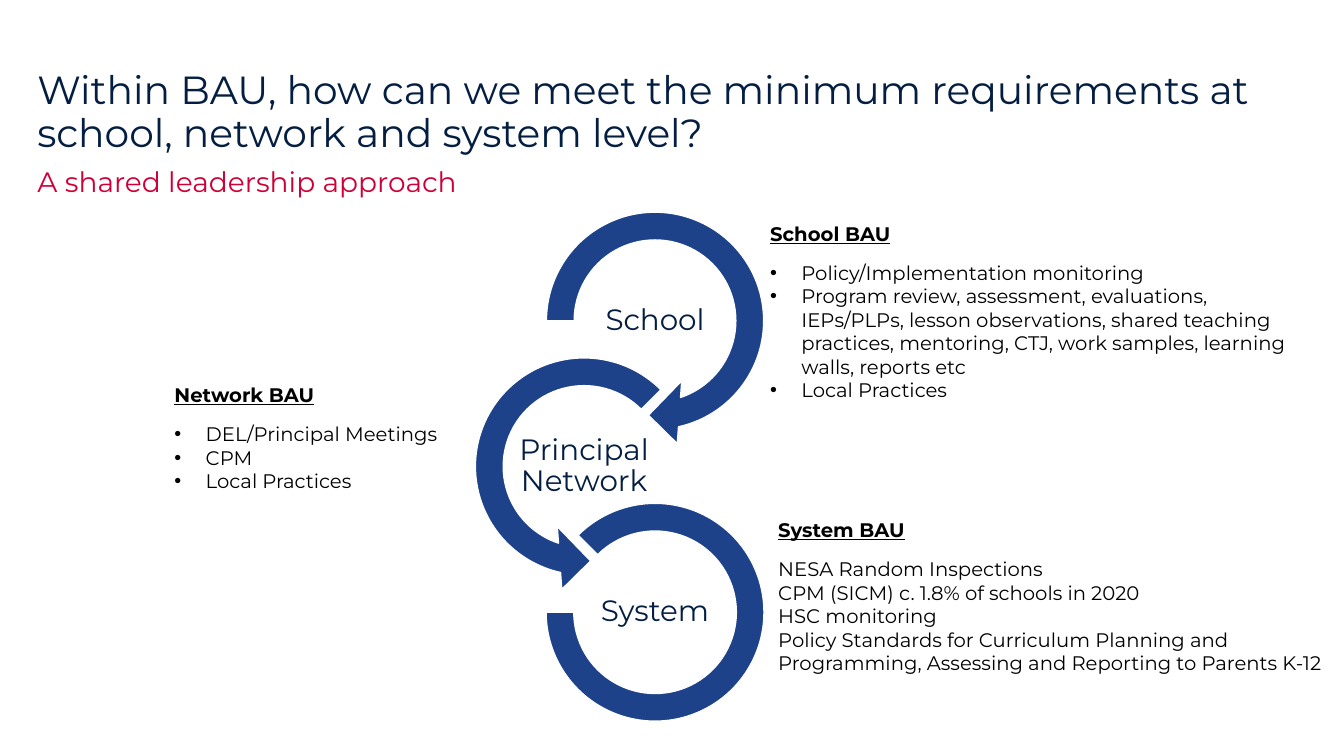
from lxml.etree import SubElement
from pptx import Presentation
from pptx.dml.color import RGBColor
from pptx.enum.shapes import MSO_SHAPE
from pptx.enum.text import MSO_ANCHOR, MSO_AUTO_SIZE, PP_ALIGN
from pptx.oxml.ns import qn
from pptx.util import Inches, Pt

COLORS = {
    "navy": "041E42",
    "red": "CE0037",
    "ring": "1D428A",
    "black": "000000",
    "white": "FFFFFF",
}
FONT = "Montserrat"
COL = Inches(13.33) / 100
ROW = Inches(7.5) / 100
LIST_INDENT = Inches(0.31)

RINGS = [
    ("School", MSO_SHAPE.CIRCULAR_ARROW, [0.11, 11.42, 45, 108, 0.125], 1, 0.48),
    ("Principal Network", MSO_SHAPE.LEFT_CIRCULAR_ARROW,
     [0.11, 11.42, 63, 189, 0.125], 0, 0.48),
    ("System", MSO_SHAPE.BLOCK_ARC, [135, 108, 0.127], 1, 0.414),
]


def grid_box(left, top, width, height):
    return [round(n) for n in (left * COL, top * ROW, width * COL, height * ROW)]


def place(shape, box):
    shape.left, shape.top, shape.width, shape.height = box


def set_frame(frame, margins=(0, 0, 0, 0), anchor=MSO_ANCHOR.TOP):
    frame.word_wrap = True
    frame.auto_size = MSO_AUTO_SIZE.NONE
    frame.vertical_anchor = anchor
    (frame.margin_left, frame.margin_top,
     frame.margin_right, frame.margin_bottom) = [Inches(m) for m in margins]


def write(paragraph, text, size=14, color="black", bold=False, underline=False,
          align=PP_ALIGN.LEFT, line=1.0, before=0, after=0, bullet=False):
    props = paragraph._p.get_or_add_pPr()
    indent = LIST_INDENT if bullet else 0
    props.set("marL", str(indent))
    props.set("indent", str(-indent))
    if bullet:
        SubElement(props, qn("a:buFont"), typeface="Arial")
        SubElement(props, qn("a:buChar"), char="•")
    else:
        SubElement(props, qn("a:buNone"))
    paragraph.alignment = align
    paragraph.line_spacing = line
    paragraph.space_before = Pt(before)
    paragraph.space_after = Pt(after)
    run = paragraph.add_run()
    run.text = text
    run.font.name = FONT
    run.font.size = Pt(size)
    run.font.bold = bold
    run.font.underline = underline
    run.font.color.rgb = RGBColor.from_string(COLORS[color])


def add_heading(title, subtitle, box):
    left, top, width, height = box
    place(title, (left, top, width, round(height * 0.47)))
    set_frame(title.text_frame, anchor=MSO_ANCHOR.MIDDLE)
    write(title.text_frame.paragraphs[0],
          "Within BAU, how can we meet the minimum requirements at school, "
          "network and system level?", size=28, color="navy", line=0.9)
    place(subtitle, (left, top + round(height * 0.49), width, round(height * 0.51)))
    set_frame(subtitle.text_frame, margins=(0, 0.05, 0.1, 0.05))
    write(subtitle.text_frame.paragraphs[0], "A shared leadership approach",
          size=20, color="red", line=1.5, after=6)


def add_practices(holder, box, heading, items, bullet=True):
    place(holder, box)
    frame = holder.text_frame
    set_frame(frame)
    write(frame.paragraphs[0], heading, bold=True, underline=True)
    for index, item in enumerate(items):
        write(frame.add_paragraph(), item, bullet=bullet,
              before=0 if index else 11)


def add_rings(slide, box):
    left, top, width, height = box
    full = height * 0.48
    pitch = height * 0.277
    label_width, label_height = height * 0.27, height * 0.134
    for level, (name, outline, adjustments, side, share) in enumerate(RINGS):
        center_x = left + full / 2 + side * (width - full)
        center_y = top + full / 2 + level * pitch
        size = height * share
        ring = slide.shapes.add_shape(
            outline, round(center_x - size / 2), round(center_y - size / 2),
            round(size), round(size))
        for index, value in enumerate(adjustments):
            ring.adjustments[index] = value
        ring.shadow.inherit = False
        ring.fill.solid()
        ring.fill.fore_color.rgb = RGBColor.from_string(COLORS["ring"])
        ring.line.color.rgb = RGBColor.from_string(COLORS["white"])
        ring.line.width = Pt(1)
        label = slide.shapes.add_textbox(
            round(center_x - label_width / 2), round(center_y - label_height / 2),
            round(label_width), round(label_height))
        set_frame(label.text_frame, margins=[0.01] * 4, anchor=MSO_ANCHOR.MIDDLE)
        write(label.text_frame.paragraphs[0], name, size=21, color="navy",
              align=PP_ALIGN.CENTER, line=0.9)


def main():
    deck = Presentation()
    deck.slide_width = round(COL * 100)
    deck.slide_height = round(ROW * 100)
    slide = deck.slides.add_slide(deck.slide_layouts.get_by_name("Comparison"))
    title, subtitle, school, network, system = slide.placeholders

    add_heading(title, subtitle, grid_box(2.78, 11.33, 94.2, 15.5))
    add_rings(slide, grid_box(34.06, 25.73, 24.08, 69.6))
    add_practices(school, grid_box(57.3, 29.33, 38.9, 20.1), "School BAU", [
        "Policy/Implementation monitoring",
        "Program review, assessment, evaluations, IEPs/PLPs, lesson observations, "
        "shared teaching practices, mentoring, CTJ, work samples, learning walls, "
        "reports etc",
        "Local Practices",
    ])
    add_practices(network, grid_box(12.98, 50.67, 21.1, 22.5), "Network BAU", [
        "DEL/Principal Meetings",
        "CPM",
        "Local Practices",
    ])
    add_practices(system, grid_box(57.9, 68.53, 41.3, 22.9), "System BAU", [
        "NESA Random Inspections",
        "CPM (SICM) c. 1.8% of schools in 2020",
        "HSC monitoring",
        "Policy Standards for Curriculum Planning and Programming, Assessing and "
        "Reporting to Parents K-12",
    ], bullet=False)
    deck.save("out.pptx")


if __name__ == "__main__":
    main()
